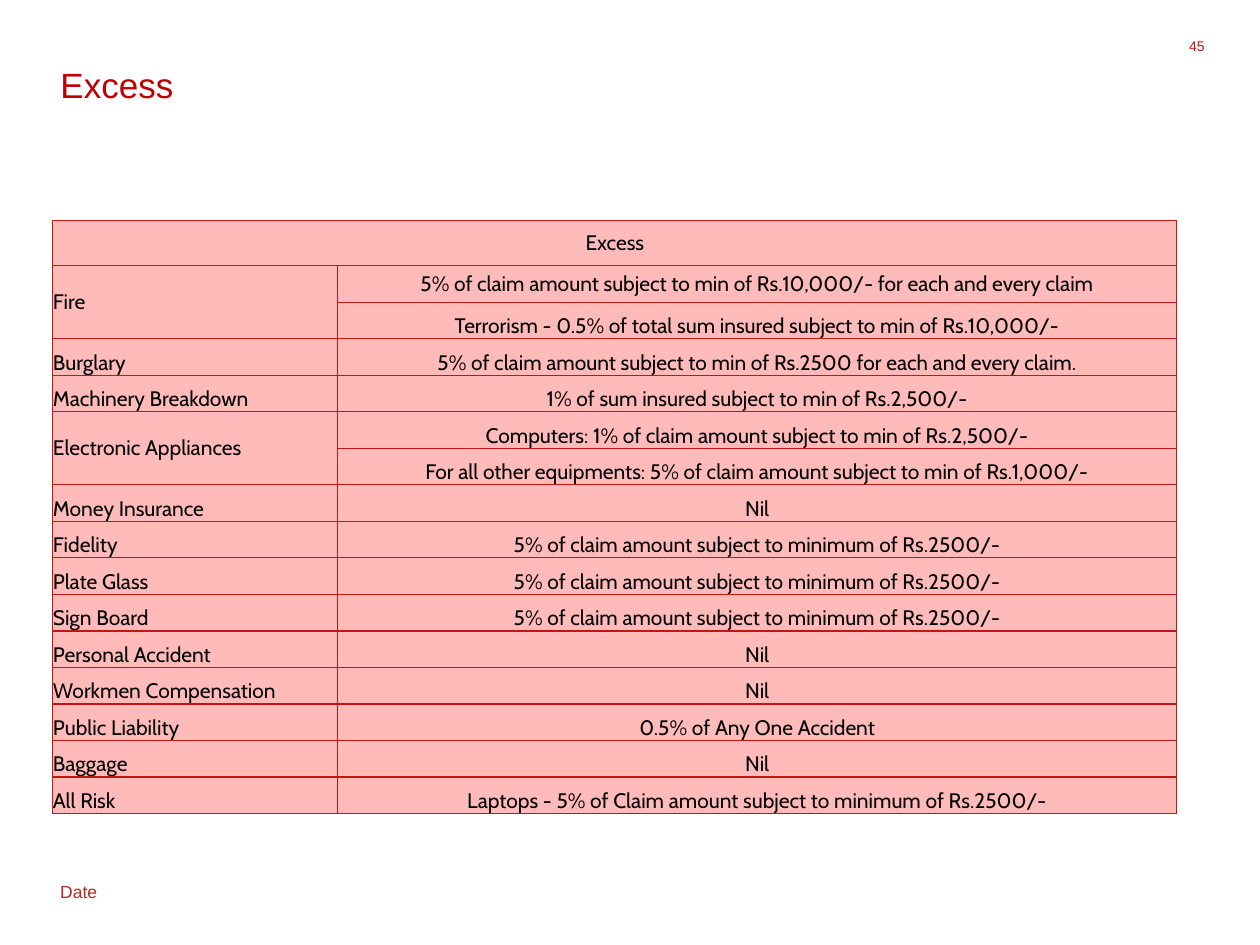
from lxml import etree
from pptx import Presentation
from pptx.dml.color import RGBColor
from pptx.enum.text import MSO_ANCHOR, MSO_AUTO_SIZE, PP_ALIGN
from pptx.oxml.ns import qn
from pptx.util import Inches, Pt

TOP, MIDDLE, BOTTOM = MSO_ANCHOR.TOP, MSO_ANCHOR.MIDDLE, MSO_ANCHOR.BOTTOM
LEFT, CENTER, RIGHT = PP_ALIGN.LEFT, PP_ALIGN.CENTER, PP_ALIGN.RIGHT
NO_FIT = MSO_AUTO_SIZE.NONE
TITLE_ONLY = 5

COLORS = {
    "title": "C00000",
    "date": "BE2328",
    "number": "C21B17",
    "cell": "FFBABA",
    "border": "C21612",
    "text": "000000",
}

MINIMUM = "5% of claim amount subject to minimum of Rs.2500/-"
EXCESSES = [
    ("Fire", [
        "5% of claim amount subject to min of Rs.10,000/- for each and every claim",
        "Terrorism - 0.5% of total sum insured subject to min of Rs.10,000/-",
    ]),
    ("Burglary", ["5% of claim amount subject to min of Rs.2500 for each and every claim."]),
    ("Machinery Breakdown", ["1% of sum insured subject to min of Rs.2,500/-"]),
    ("Electronic Appliances", [
        "Computers: 1% of claim amount subject to min of Rs.2,500/-",
        "For all other equipments: 5% of claim amount subject to min of Rs.1,000/-",
    ]),
    ("Money Insurance", ["Nil"]),
    ("Fidelity", [MINIMUM]),
    ("Plate Glass", [MINIMUM]),
    ("Sign Board", [MINIMUM]),
    ("Personal Accident", ["Nil"]),
    ("Workmen Compensation", ["Nil"]),
    ("Public Liability", ["0.5% of Any One Accident"]),
    ("Baggage", ["Nil"]),
    ("All Risk", ["Laptops - 5% of Claim amount subject to minimum of Rs.2500/-"]),
]


def color(name):
    return RGBColor.from_string(COLORS[name])


def write(frame, text, size, tint, font="Arial", align=LEFT):
    para = frame.paragraphs[0]
    para.alignment = align
    span = para.add_run()
    span.text = text
    span.font.name = font
    span.font.size = Pt(size)
    span.font.color.rgb = color(tint)
    return para


def place(shape, box):
    shape.left, shape.top, shape.width, shape.height = map(Inches, box)


def clear_margins(target):
    target.margin_left = target.margin_right = 0
    target.margin_top = target.margin_bottom = 0


def add_title(page, box):
    title = page.shapes.title
    place(title, box)
    frame = title.text_frame
    frame.auto_size = NO_FIT
    frame.vertical_anchor = TOP
    write(frame, "Excess", 20, "title").line_spacing = Pt(22)


def add_date(page, box):
    frame = page.shapes.add_textbox(*map(Inches, box)).text_frame
    frame.word_wrap = False
    para = write(frame, "Date", 10, "date")
    para.line_spacing = 1.15
    para.space_after = Pt(10)


def add_page_number(page, box):
    frame = page.shapes.add_textbox(*map(Inches, box)).text_frame
    frame.word_wrap = True
    clear_margins(frame)
    write(frame, "45", 8, "number", align=RIGHT)


def style_cell(cell):
    clear_margins(cell)
    properties = cell._tc.get_or_add_tcPr()
    for side in ("lnL", "lnR", "lnT", "lnB"):
        line = etree.SubElement(properties, qn(f"a:{side}"), w=str(Pt(0.75)))
        fill = etree.SubElement(line, qn("a:solidFill"))
        etree.SubElement(fill, qn("a:srgbClr"), val=COLORS["border"])
    cell.fill.solid()
    cell.fill.fore_color.rgb = color("cell")


def fill_cell(cell, text, align, anchor):
    cell.vertical_anchor = anchor
    write(cell.text_frame, text, 12, "text", "Cabin", align)


def add_excess_table(page, box):
    left, top, width, height = box
    row_count = 1 + sum(len(terms) for _, terms in EXCESSES)
    table = page.shapes.add_table(row_count, 2, *map(Inches, box)).table
    label_width, header_height = 2.26, 0.36
    table.columns[0].width = Inches(label_width)
    table.columns[1].width = Inches(width - label_width)
    for row in table.rows:
        row.height = Inches((height - header_height) / (row_count - 1))
    table.rows[0].height = Inches(header_height)
    for cell in table.iter_cells():
        style_cell(cell)

    table.cell(0, 0).merge(table.cell(0, 1))
    fill_cell(table.cell(0, 0), "Excess", CENTER, MIDDLE)
    row = 1
    for label, terms in EXCESSES:
        label_cell = table.cell(row, 0)
        if len(terms) > 1:
            label_cell.merge(table.cell(row + len(terms) - 1, 0))
        fill_cell(label_cell, label, LEFT, MIDDLE if len(terms) > 1 else BOTTOM)
        for term in terms:
            fill_cell(table.cell(row, 1), term, CENTER, MIDDLE if row == 1 else BOTTOM)
            row += 1


def main():
    deck = Presentation()
    deck.slide_width, deck.slide_height = Inches(10), Inches(7.5)
    page = deck.slides.add_slide(deck.slide_layouts[TITLE_ONLY])
    add_date(page, (0.38, 6.92, 0.5, 0.28))
    add_page_number(page, (9.34, 0.3, 0.22, 0.2))
    add_title(page, (0.38, 0.48, 9.17, 0.57))
    add_excess_table(page, (0.42, 1.75, 8.92, 4.71))
    deck.save("out.pptx")


if __name__ == "__main__":
    main()
